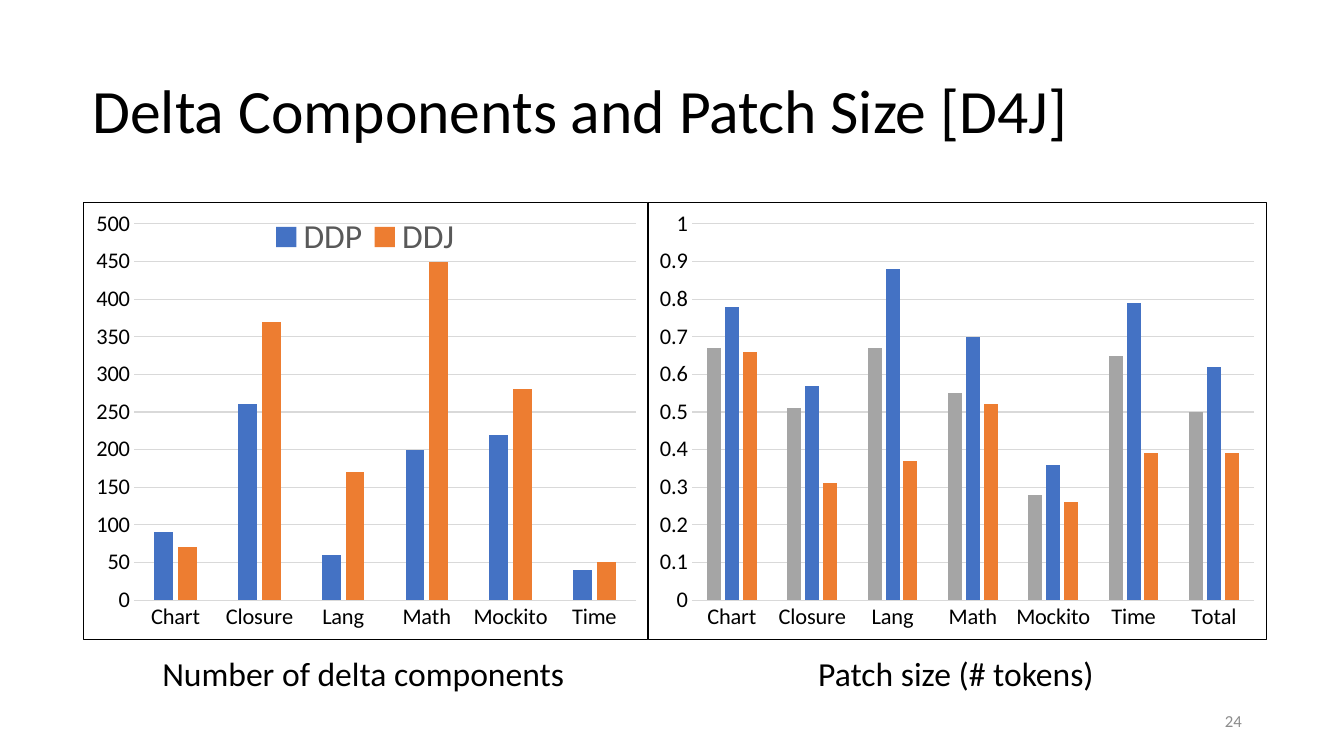
from lxml import etree
from pptx import Presentation
from pptx.chart.data import CategoryChartData
from pptx.dml.color import RGBColor
from pptx.enum.chart import XL_CHART_TYPE, XL_LEGEND_POSITION, XL_TICK_MARK
from pptx.enum.text import MSO_ANCHOR, MSO_AUTO_SIZE, PP_ALIGN
from pptx.oxml import parse_xml
from pptx.oxml.ns import nsdecls, qn
from pptx.util import Cm, Pt

COLUMN = XL_CHART_TYPE.COLUMN_CLUSTERED
TOP_KEY = XL_LEGEND_POSITION.TOP
NO_TICK = XL_TICK_MARK.NONE
MIDDLE, UPPER = MSO_ANCHOR.MIDDLE, MSO_ANCHOR.TOP
LEFT, RIGHT = PP_ALIGN.LEFT, PP_ALIGN.RIGHT
GROW, FIXED = MSO_AUTO_SIZE.SHAPE_TO_FIT_TEXT, MSO_AUTO_SIZE.NONE

BLACK = RGBColor(0x00, 0x00, 0x00)
DARK = RGBColor(0x59, 0x59, 0x59)
MUTED = RGBColor(0x8C, 0x8C, 0x8C)
PALE = RGBColor(0xD9, 0xD9, 0xD9)
GRAY = RGBColor(0xA5, 0xA5, 0xA5)
BLUE = RGBColor(0x44, 0x72, 0xC4)
ORANGE = RGBColor(0xED, 0x7D, 0x31)

HUES = {"D4J": GRAY, "DDP": BLUE, "DDJ": ORANGE}
NAMES = ["Chart", "Closure", "Lang", "Math", "Mockito", "Time"]
COUNTS = {
    "DDP": [90, 260, 60, 200, 220, 40],
    "DDJ": [70, 370, 170, 450, 280, 50],
}
SIZES = {
    "D4J": [0.67, 0.51, 0.67, 0.55, 0.28, 0.65, 0.5],
    "DDP": [0.78, 0.57, 0.88, 0.7, 0.36, 0.79, 0.62],
    "DDJ": [0.66, 0.31, 0.37, 0.52, 0.26, 0.39, 0.39],
}


def assign(target, values):
    for name, value in values.items():
        setattr(target, name, value)


def layout(box, inner=False):
    """Return a manual chart layout from x, y, w, h as parts of the chart."""
    root = parse_xml(f"<c:layout {nsdecls('c')}><c:manualLayout/></c:layout>")
    parts = [("layoutTarget", "inner")] if inner else []
    parts += [("xMode", "edge"), ("yMode", "edge"), *zip("xywh", box)]
    for tag, value in parts:
        etree.SubElement(root[0], qn(f"c:{tag}")).set("val", str(value))
    return root


class Deck:
    face = "Calibri"

    def __init__(self):
        self.show = Presentation()
        assign(self.show, {"slide_width": Cm(33.87), "slide_height": Cm(19.05)})
        self.slide = self.show.slides.add_slide(self.show.slide_layouts[6])

    def style(self, font, size, color=BLACK):
        assign(font, {"name": self.face, "size": Pt(size), "bold": False})
        font.color.rgb = color

    def text(self, words, box, size, color=BLACK, align=LEFT, space=1.0,
             anchor=MIDDLE, wrap=True, fit=FIXED):
        frame = self.slide.shapes.add_textbox(*map(Cm, box)).text_frame
        assign(frame, {"word_wrap": wrap, "auto_size": fit,
                       "vertical_anchor": anchor})
        para = frame.paragraphs[0]
        assign(para, {"alignment": align, "line_spacing": space})
        run = para.add_run()
        run.text = words
        self.style(run.font, size, color)

    def caption(self, words, box):
        self.text(words, box, 24, anchor=UPPER, wrap=False, fit=GROW)

    def columns(self, names, rows, box, top, step, plot, key=None):
        """Draw a framed column chart; key is the legend's layout box."""
        data = CategoryChartData()
        data.categories = names
        for name, values in rows.items():
            data.add_series(name, values)
        chart = self.slide.shapes.add_chart(COLUMN, *map(Cm, box), data).chart
        self.style(chart.font, 10)
        assign(chart, {"has_title": False, "has_legend": key is not None})
        self.frame(chart, plot)
        self.axes(chart, top, step)
        bars = chart.plots[0]
        assign(bars, {"gap_width": 219, "overlap": -27, "vary_by_categories": False})
        for row in bars.series:
            row.format.fill.solid()
            row.format.fill.fore_color.rgb = HUES[row.name]
        if key:
            self.legend(chart.legend, key)

    def axes(self, chart, top, step):
        cats, vals = chart.category_axis, chart.value_axis
        for axis in (cats, vals):
            assign(axis, {"major_tick_mark": NO_TICK, "minor_tick_mark": NO_TICK})
            self.style(axis.tick_labels.font, 16)
        assign(vals, {"minimum_scale": 0, "maximum_scale": top,
                      "major_unit": step, "has_major_gridlines": True})
        vals.format.line.fill.background()
        for line in (cats.format.line, vals.major_gridlines.format.line):
            line.color.rgb = PALE
            line.width = Pt(0.75)

    def legend(self, legend, key):
        assign(legend, {"position": TOP_KEY, "include_in_layout": True})
        self.style(legend.font, 24, DARK)
        legend._element.find(qn("c:legendPos")).addnext(layout(key))

    def frame(self, chart, plot):
        """Place the plot area and draw the chart's outer border."""
        root = chart._chartSpace.find(qn("c:chart"))
        area = root.find(qn("c:plotArea"))
        for old in area.findall(qn("c:layout")):
            area.remove(old)
        area.insert(0, layout(plot, inner=True))
        root.addnext(parse_xml(
            f'<c:spPr {nsdecls("c", "a")}><a:noFill/><a:ln w="{Pt(0.75)}">'
            f'<a:solidFill><a:srgbClr val="{BLACK}"/></a:solidFill></a:ln></c:spPr>'))


def main():
    deck = Deck()
    deck.text("Delta Components and Patch Size [D4J]",
              (2.08, 1.02, 29.85, 3.68), 44, space=0.9)
    deck.text("24", (23.93, 17.65, 7.62, 1.02), 12, MUTED, RIGHT)
    deck.columns(NAMES + ["Total"], SIZES, (16.33, 5.08, 15.6, 11.05),
                 1, 0.1, (0.07, 0.05, 0.91, 0.86))
    deck.columns(NAMES, COUNTS, (2.08, 5.08, 14.25, 11.05),
                 500, 50, (0.09, 0.05, 0.89, 0.86), (0.32, 0.03, 0.36, 0.1))
    deck.caption("Number of delta components", (3.84, 16.33, 10.74, 1.27))
    deck.caption("Patch size (# tokens)", (20.37, 16.33, 7.52, 1.27))
    deck.show.save("out.pptx")


if __name__ == "__main__":
    main()
